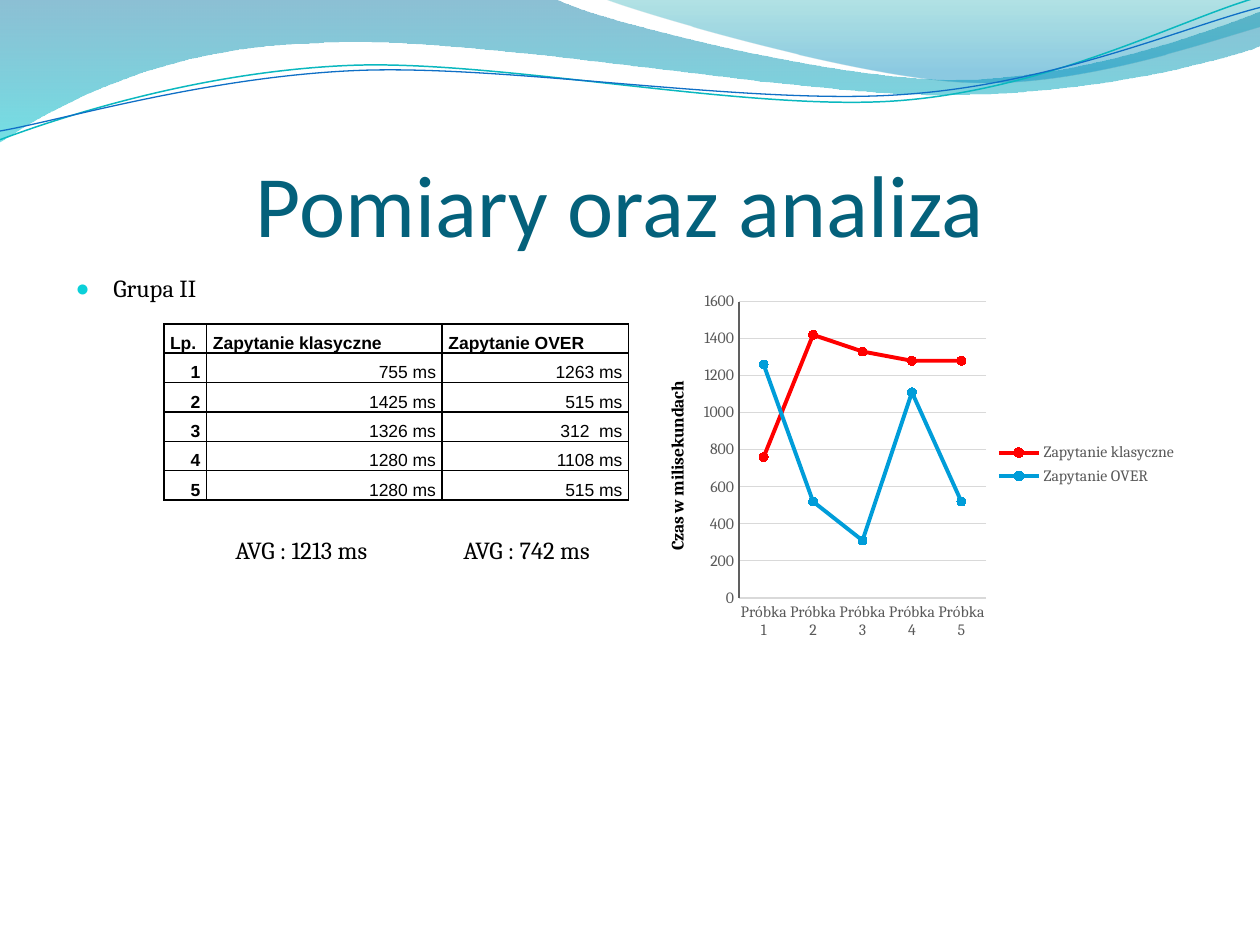
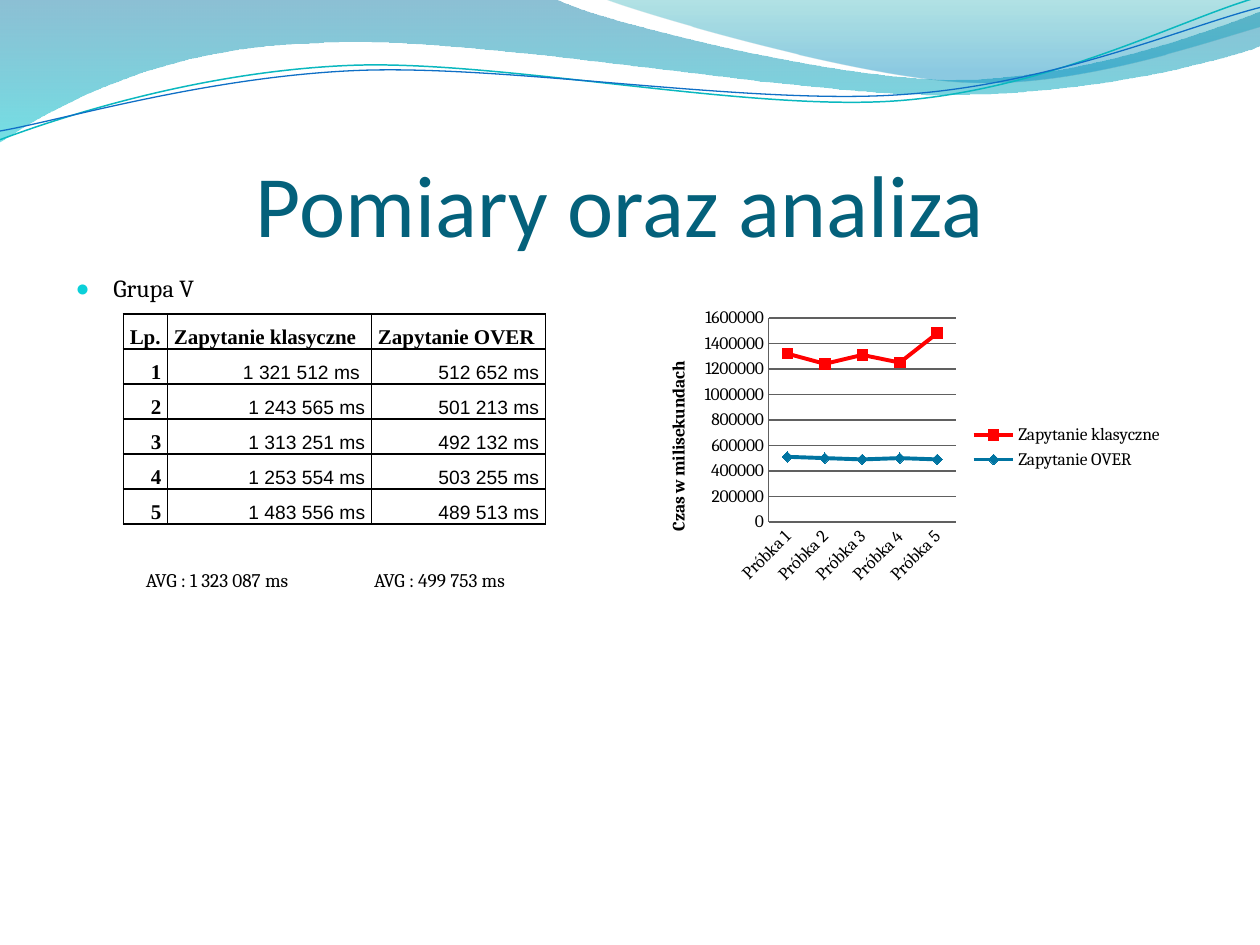
from math import cos, radians, sin
from pptx import Presentation
from pptx.chart.data import CategoryChartData
from pptx.dml.color import RGBColor
from pptx.enum.chart import XL_CHART_TYPE, XL_LEGEND_POSITION, XL_MARKER_STYLE, XL_TICK_MARK
from pptx.enum.text import MSO_ANCHOR, MSO_AUTO_SIZE, PP_ALIGN
from pptx.oxml import parse_xml
from pptx.oxml.ns import nsdecls, qn
from pptx.util import Inches, Pt

deck = Presentation()
deck.slide_width, deck.slide_height = Inches(10), Inches(7.5)
wide, high = deck.slide_width / 100, deck.slide_height / 100
unit = Inches(1)


def hue(code):
    return RGBColor.from_string(code)


def box(x, y, w, h):
    return round(x * wide), round(y * high), round(w * wide), round(h * high)


INK, TEAL, BLUE, RED = "000000", "04617B", "0F6FC6", "FF0000"
HEAD = ["Lp.", "Zapytanie klasyczne", "Zapytanie OVER"]
TILT = 2.7

waves = [
    dict(start=(0, 0), fill=[("0074A1", 0, 45), ("00C6CF", 1, 55)], steps=[
        [(4.4, -0.01)], [(4.76, 0.17), (6.64, 0.63), (7.58, 0.63)],
        [(8.53, 0.63), (9.58, 0.26), (10, 0.09)], [(10.01, 0.36)],
        [(9.83, 0.44), (8.7, 0.76), (7.46, 0.75)],
        [(6.22, 0.75), (3.82, 0.28), (2.57, 0.34)],
        [(1.29, 0.36), (0.46, 0.83), (-0.01, 1.13)], [(0, 0)]]),
    dict(start=(4.79, -0.01), fill=[("00A1A9", 0, 30), ("008BBF", 0.8, 45)], steps=[
        [(5.09, 0.11), (6.82, 0.62), (7.69, 0.65)],
        [(8.56, 0.69), (9.61, 0.32), (10, 0.21)], [(10, 0)], [(4.79, -0.01)]]),
    dict(start=(0, 1.11), line=("0AB8BF", 0.85), steps=[
        [(0.48, 0.93), (1.58, 0.57), (2.77, 0.52)],
        [(3.95, 0.47), (5.93, 0.89), (7.13, 0.8)],
        [(8.33, 0.71), (9.38, 0.15), (9.98, -0.02)]]),
    dict(start=(0, 1.04), line=(BLUE, 0.75), steps=[
        [(0.47, 0.96), (1.64, 0.61), (2.83, 0.56)],
        [(4.03, 0.51), (5.97, 0.84), (7.17, 0.75)],
        [(8.36, 0.67), (9.41, 0.21), (10, 0.06)]]),
]

pages = [
    dict(group="Grupa II", spot=(13, 34.27), cols=[3.4, 18.7, 14.8],
         head=("Arial", 10), cell=("Arial", 10),
         rows=[("755 ms", "1263 ms"), ("1425 ms", "515 ms"), ("1326 ms", "312  ms"),
               ("1280 ms", "1108 ms"), ("1280 ms", "515 ms")],
         chart=(50.8, 30, 43.6, 38.27), plot=(0.18, 0.05, 0.45, 0.82),
         top=1600, size=9, tone="595959", grid="D9D9D9", base="D9D9D9", turn=-1000,
         marks=[(RED, XL_MARKER_STYLE.CIRCLE), ("009DD9", XL_MARKER_STYLE.CIRCLE)], dot=5,
         means=["AVG : 1213 ms", "AVG : 742 ms"], mean=(17.7, 55.2, 13.8, 5.33),
         text=14, tail=[(" ", 18)]),
    dict(group="Grupa V", spot=(9.8, 33.2), cols=[3.5, 16.2, 13.8],
         head=("Times New Roman", 12), cell=("Arial", 11),
         rows=[("1 321 512 ms ", "512 652 ms"), ("1 243 565 ms", "501 213 ms"),
               ("1 313 251 ms", "492 132 ms"), ("1 253 554 ms", "503 255 ms"),
               (" 1 483 556 ms", "489 513 ms")],
         chart=(50.8, 32.13, 42.5, 30.4), plot=(0.24, 0.05, 0.35, 0.71),
         top=1600000, size=10, tone=INK, grid="606060", base="606060", turn=-45,
         marks=[(RED, XL_MARKER_STYLE.SQUARE), ("0074A1", XL_MARKER_STYLE.DIAMOND)], dot=6,
         means=["AVG : 1 323 087 ms", "AVG : 499 753 ms"], mean=(10.6, 59.47, 14.5, 3.87),
         text=11, tail=[]),
]

slides = [deck.slides.add_slide(deck.slide_layouts[1]) for page in pages]
back = deck.slide_master.shapes.element

for n, wave in enumerate(waves):
    solid = "fill" in wave
    turn = radians(0 if solid else TILT)
    dots = []
    for x, y in [wave["start"]] + sum(wave["steps"], []):
        dx, dy = x - 5, y - 0.57
        dots.append((round((5 + dx * cos(turn) - dy * sin(turn)) * unit),
                     round((0.57 + dx * sin(turn) + dy * cos(turn)) * unit)))
    pen = slides[0].shapes.build_freeform(*dots[0])
    pen.add_line_segments(dots[1:], close=solid)
    shape = pen.convert_to_shape()
    shape.shadow.inherit = False
    trail = next(shape.element.iter(qn("a:path")))
    lines = iter(trail.findall(qn("a:lnTo")))
    for step in wave["steps"]:
        legs = [next(lines) for dot in step]
        if len(legs) == 3:
            curve = parse_xml(f'<a:cubicBezTo {nsdecls("a")}/>')
            legs[0].addprevious(curve)
            for leg in legs:
                curve.append(leg[0])
                trail.remove(leg)
    if solid:
        shape.line.fill.background()
        shape.fill.gradient()
        shape.fill.gradient_angle = 270
        for stop, (code, place, alpha) in zip(shape.fill.gradient_stops, wave["fill"]):
            stop.color.rgb = hue(code)
            stop.position = place
        tints = list(shape.element.iter(qn("a:srgbClr")))
        for tint, (code, place, alpha) in zip(tints, wave["fill"]):
            tint.append(parse_xml(f'<a:alpha {nsdecls("a")} val="{alpha * 1000}"/>'))
    else:
        shape.rotation = 360 - TILT
        shape.fill.background()
        shape.line.color.rgb = hue(wave["line"][0])
        shape.line.width = Pt(wave["line"][1])
    shape.element.nvSpPr.cNvPr.set("id", str(20 + n))
    back.insert(2 + n, shape.element)

for slide, page in zip(slides, pages):
    title, body = slide.placeholders
    title.left, title.top, title.width, title.height = box(5, 10.27, 90, 16.67)
    frame = title.text_frame
    frame.auto_size = MSO_AUTO_SIZE.NONE
    frame.vertical_anchor = MSO_ANCHOR.BOTTOM
    frame.margin_left = frame.margin_right = frame.margin_bottom = 0
    frame.margin_top = Inches(0.05)
    para = frame.paragraphs[0]
    para.alignment = PP_ALIGN.CENTER
    run = para.add_run()
    run.text = "Pomiary oraz analiza "
    run.font.name, run.font.size = "Calibri", Pt(50)
    run.font.color.rgb = hue(TEAL)

    body.left, body.top, body.width, body.height = box(5, 28.27, 90, 64)
    run = body.text_frame.paragraphs[0].add_run()
    run.text = page["group"]
    run.font.name, run.font.size = "Cambria", Pt(14)
    run.font.color.rgb = hue(INK)
    props = next(body.element.iter(qn("a:p"))).get_or_add_pPr()
    props.set("marL", str(Inches(0.3)))
    props.set("indent", str(-Inches(0.3)))
    for part in ('<a:buClr {}><a:srgbClr val="0BD0D9"/></a:buClr>',
                 '<a:buSzPct {} val="95000"/>', '<a:buChar {} char="●"/>'):
        props.append(parse_xml(part.format(nsdecls("a"))))

    cols = page["cols"]
    rows = [HEAD] + [(str(n), *row) for n, row in enumerate(page["rows"], 1)]
    grid = slide.shapes.add_table(len(rows), len(cols), *box(*page["spot"], sum(cols), 2.67 * len(rows)))
    table = grid.table
    table.first_row = table.horz_banding = False
    for col, width in zip(table.columns, cols):
        col.width = round(width * wide)
    for r, row in enumerate(rows):
        for c, word in enumerate(row):
            cell = table.cell(r, c)
            cell.margin_left = cell.margin_right = Inches(0.05)
            cell.margin_top = cell.margin_bottom = 0
            cell.vertical_anchor = MSO_ANCHOR.BOTTOM
            cell.fill.background()
            bold = r == 0 or c == 0
            para = cell.text_frame.paragraphs[0]
            para.line_spacing = 1.5
            para.alignment = PP_ALIGN.RIGHT if r else PP_ALIGN.LEFT
            run = para.add_run()
            run.text = word
            name, size = page["head" if bold else "cell"]
            run.font.name, run.font.size, run.font.bold = name, Pt(size), bold
            run.font.color.rgb = hue(INK)
    for props in grid.element.iter(qn("a:tcPr")):
        for n, side in enumerate("LRTB"):
            props.insert(n, parse_xml(
                f'<a:ln{side} {nsdecls("a")} w="12700"><a:solidFill>'
                f'<a:srgbClr val="{INK}"/></a:solidFill></a:ln{side}>'))

    data = CategoryChartData()
    data.categories = [f"Próbka {n}" for n in range(1, 6)]
    grain = page["top"] // 160
    for name, cells in zip(HEAD[1:], zip(*page["rows"])):
        times = [int("".join(filter(str.isdigit, cell))) for cell in cells]
        data.add_series(name, [round(time / grain) * grain for time in times])
    chart = slide.shapes.add_chart(XL_CHART_TYPE.LINE_MARKERS, *box(*page["chart"]), data).chart
    chart.has_title = False
    chart.font.name, chart.font.size = "Cambria", Pt(page["size"])
    chart.font.color.rgb = hue(page["tone"])
    chart.has_legend = True
    chart.legend.position = XL_LEGEND_POSITION.RIGHT
    chart.legend.include_in_layout = False
    chart.plots[0].vary_by_categories = False
    for line, (code, mark) in zip(chart.plots[0].series, page["marks"]):
        line.smooth = False
        line.format.line.color.rgb = hue(code)
        line.format.line.width = Pt(2.25)
        line.marker.style, line.marker.size = mark, page["dot"]
        line.marker.format.fill.solid()
        line.marker.format.fill.fore_color.rgb = hue(code)
        line.marker.format.line.color.rgb = hue(code)
    down, across = chart.value_axis, chart.category_axis
    down.minimum_scale, down.maximum_scale, down.major_unit = 0, page["top"], page["top"] / 8
    for axis, code in ((down, "606060"), (across, page["base"])):
        axis.major_tick_mark = axis.minor_tick_mark = XL_TICK_MARK.NONE
        axis.format.line.color.rgb = hue(code)
        axis.format.line.width = Pt(0.75)
        axis.tick_labels.font.size = Pt(page["size"])
    down.major_gridlines.format.line.color.rgb = hue(page["grid"])
    down.major_gridlines.format.line.width = Pt(0.75)
    run = down.axis_title.text_frame.paragraphs[0].add_run()
    run.text = "Czas w milisekundach"
    run.font.name, run.font.size, run.font.bold = "Cambria", Pt(10), True
    run.font.color.rgb = hue(INK)
    for axis, tag, turn in (("c:valAx", "c:title", -90), ("c:catAx", "c:txPr", page["turn"])):
        text = next(chart.element.iter(qn(axis))).find(qn(tag))
        next(text.iter(qn("a:bodyPr"))).set("rot", str(turn * 60000))
    plot = next(chart.element.iter(qn("c:plotArea")))
    for old in plot.findall(qn("c:layout")):
        plot.remove(old)
    spots = "".join(f'<c:{k} val="{v}"/>' for k, v in zip("xywh", page["plot"]))
    plot.insert(0, parse_xml(
        f'<c:layout {nsdecls("c")}><c:manualLayout><c:layoutTarget val="inner"/>'
        f'<c:xMode val="edge"/><c:yMode val="edge"/>{spots}</c:manualLayout></c:layout>'))

    x, y, w, h = page["mean"]
    for n, mean in enumerate(page["means"]):
        label = slide.shapes.add_textbox(*box(x + 18.1 * n, y, w, h))
        label.text_frame.word_wrap = False
        for word, size in [(mean, page["text"])] + page["tail"]:
            run = label.text_frame.paragraphs[0].add_run()
            run.text = word
            run.font.name, run.font.size = "Cambria", Pt(size)
            run.font.color.rgb = hue(INK)

deck.save("out.pptx")
